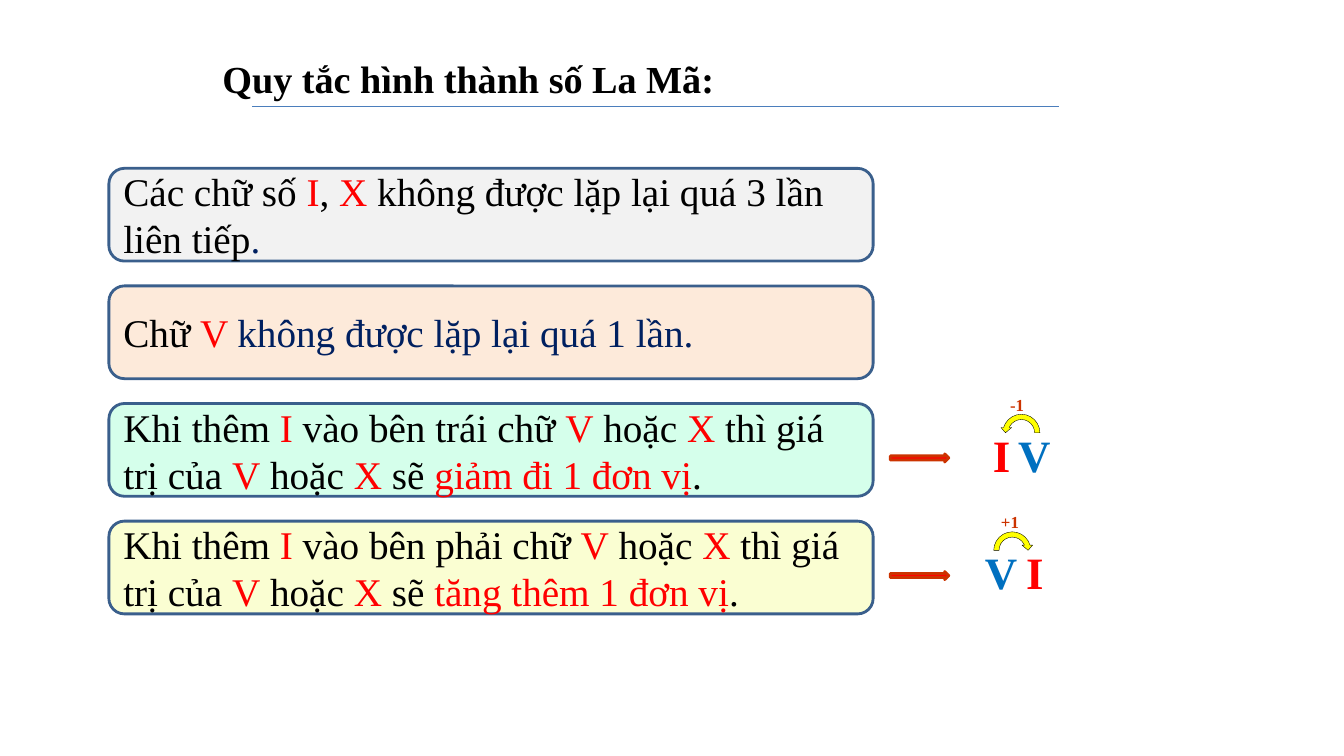
from pptx import Presentation
from pptx import util as u
from pptx.dml.color import RGBColor
from pptx.enum import shapes, text
from pptx.oxml.ns import qn
from lxml import etree

COLORS = {
    "black": "000000", "red": "FF0000", "navy": "002060", "blue": "0070C0",
    "rust": "CC3300", "yellow": "FFFF00", "border": "3A5F8C", "rule": "4B7EBC",
    "grey": "F2F2F2", "peach": "FDEADA", "mint": "D5FFEB", "cream": "FAFED2",
}


def rgb(name):
    return RGBColor.from_string(COLORS[name])


class RomanSlide:
    """Holds the current slide and the font shared by all its text."""

    font = "Times New Roman"

    def __init__(self, slide):
        self.slide = slide

    def add_runs(self, shape, runs, size, bold=False, align=text.PP_ALIGN.LEFT):
        """Fill the shape's first paragraph with (wording, colour) runs."""
        para = shape.text_frame.paragraphs[0]
        para.alignment = align
        for wording, color in runs:
            span = para.add_run()
            span.text = wording
            span.font.name = self.font
            span.font.size = u.Pt(size)
            span.font.bold = bold
            span.font.color.rgb = rgb(color)
        return para

    def title(self, wording, left, top, width, height):
        title = self.slide.shapes.title
        title.left, title.top = u.Inches(left), u.Inches(top)
        title.width, title.height = u.Inches(width), u.Inches(height)
        title.text_frame.auto_size = text.MSO_AUTO_SIZE.NONE
        title.text_frame.vertical_anchor = text.MSO_ANCHOR.MIDDLE
        para = self.add_runs(title, [(wording, "black")], 27.3, True, text.PP_ALIGN.CENTER)
        para.line_spacing = 0.9

    def rule(self, left, right, y):
        line = self.slide.shapes.add_connector(
            shapes.MSO_CONNECTOR.STRAIGHT,
            u.Inches(left), u.Inches(y), u.Inches(right), u.Inches(y))
        line.line.color.rgb = rgb("rule")
        line.line.width = u.Pt(0.75)
        etree.SubElement(line.element.spPr, qn("a:effectLst"))

    def shape(self, kind, left, top, width, height, fill, border, weight):
        shape = self.slide.shapes.add_shape(
            kind, u.Inches(left), u.Inches(top), u.Inches(width), u.Inches(height))
        shape.shadow.inherit = False
        shape.fill.solid()
        shape.fill.fore_color.rgb = rgb(fill)
        shape.line.color.rgb = rgb(border)
        shape.line.width = u.Pt(weight)
        return shape

    def card(self, top, fill, runs):
        card = self.shape(shapes.MSO_SHAPE.ROUNDED_RECTANGLE,
                          1.08, top, 7.58, 0.92, fill, "border", 2)
        card.text_frame.word_wrap = True
        card.text_frame.vertical_anchor = text.MSO_ANCHOR.MIDDLE
        self.add_runs(card, runs, 28)

    def pointer(self, top):
        self.shape(shapes.MSO_SHAPE.RIGHT_ARROW, 8.83, top, 0.58, 0.08, "red", "rust", 2)

    def arc(self, left, top, leftward):
        arc = self.shape(shapes.MSO_SHAPE.CIRCULAR_ARROW,
                         left, top, 0.42, 0.42, "yellow", "black", 0.25)
        if leftward:
            arc.element.spPr.xfrm.set("flipH", "1")

    def label(self, wording, left, top, height, size, color):
        box = self.slide.shapes.add_textbox(
            u.Inches(left), u.Inches(top), u.Inches(0.67), u.Inches(height))
        box.text_frame.word_wrap = True
        box.text_frame.auto_size = text.MSO_AUTO_SIZE.SHAPE_TO_FIT_TEXT
        self.add_runs(box, [(wording, color)], size, True)

    def example(self, card_top, arc_left, change, numerals):
        """Show a numeral pair, with its change in value, beside a card."""
        self.pointer(card_top + 0.5)
        self.arc(arc_left, card_top + 0.08, change.startswith("-"))
        for numeral, left, color in numerals:
            self.label(numeral, left, card_top + 0.19, 0.64, 32, color)
        self.label(change, arc_left, card_top - 0.14, 0.3, 12, "rust")


def adding_rule(side, effect):
    """Runs of the rule for adding I on one side of V or X."""
    v_or_x = [("V", "red"), (" hoặc ", "black"), ("X", "red")]
    return [("Khi thêm ", "black"), ("I", "red"), (f" vào bên {side} chữ ", "black"),
            *v_or_x, (" thì giá trị của ", "black"),
            *v_or_x, (" sẽ ", "black"), (effect, "red"), (".", "black")]


def main():
    deck = Presentation()
    deck.slide_width, deck.slide_height = u.Inches(13.33), u.Inches(7.5)
    page = RomanSlide(deck.slides.add_slide(deck.slide_layouts[5]))

    page.title("Quy tắc hình thành số La Mã:", 1.29, 0.47, 6.71, 0.67)
    page.rule(2.5, 10.5, 1.06)

    cards = [
        ("grey", [("Các chữ số ", "black"), ("I", "red"), (", ", "black"), ("X ", "red"),
                  ("không được lặp lại quá 3 lần liên tiếp", "black"), (".", "navy")]),
        ("peach", [("Chữ ", "black"), ("V ", "red"),
                   ("không được lặp lại quá 1 lần.", "navy")]),
        ("mint", adding_rule("trái", "giảm đi 1 đơn vị")),
        ("cream", adding_rule("phải", "tăng thêm 1 đơn vị")),
    ]
    tops = [1.67 + 3.5 / 3 * row for row in range(len(cards))]
    for top, (fill, runs) in zip(tops, cards):
        page.card(top, fill, runs)

    page.example(tops[2], 9.92, "-1", [("I", 9.75, "red"), ("V", 10, "blue")])
    page.example(tops[3], 9.83, "+1", [("V", 9.67, "blue"), ("I", 10.08, "red")])

    deck.save("out.pptx")


if __name__ == "__main__":
    main()
